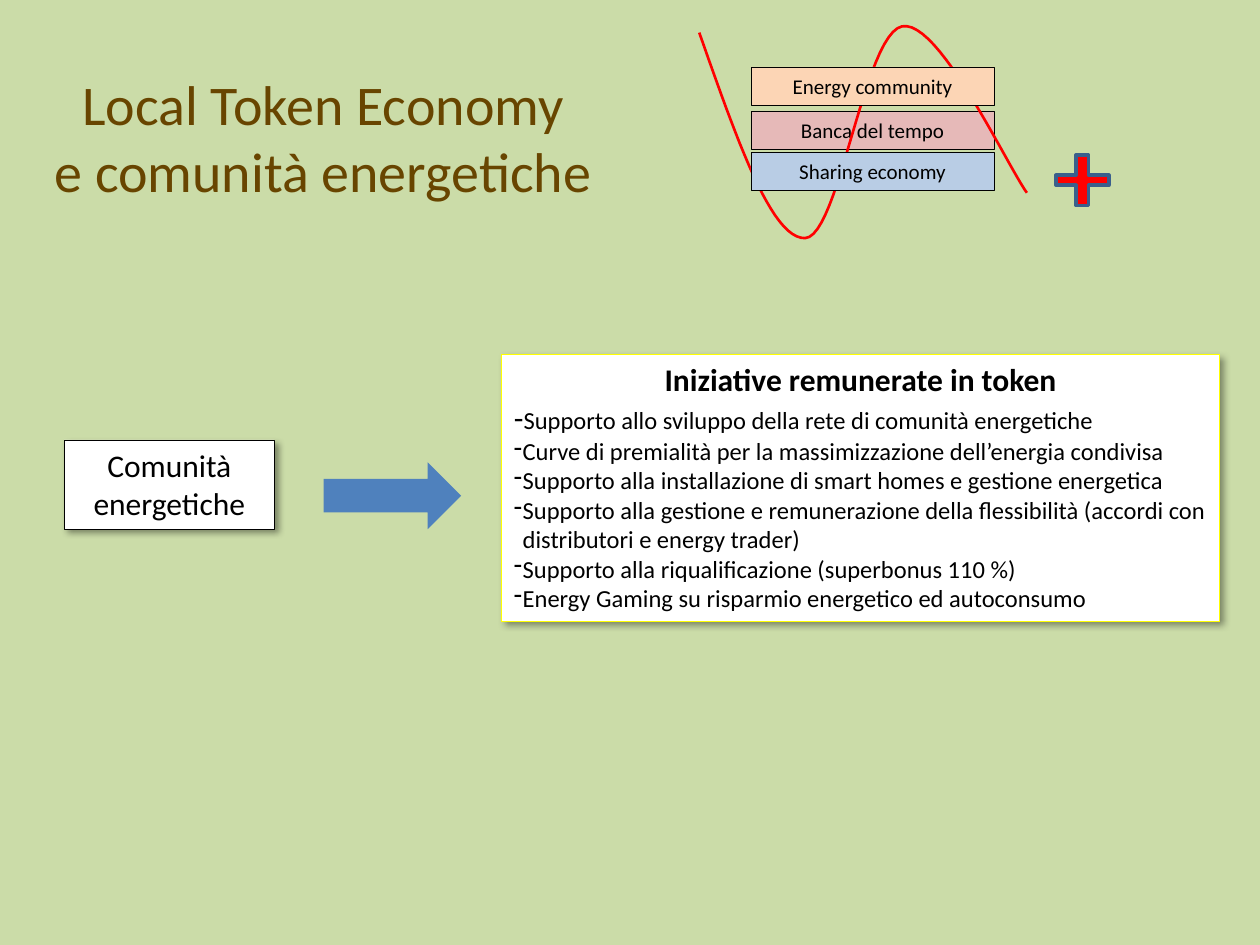
from dataclasses import dataclass

from lxml.etree import SubElement
from pptx import Presentation
from pptx.dml.color import RGBColor
from pptx.enum.shapes import MSO_SHAPE
from pptx.enum.text import MSO_ANCHOR, PP_ALIGN
from pptx.oxml import parse_xml
from pptx.oxml.ns import nsdecls, qn
from pptx.util import Pt

FONT = "Calibri"
INITIATIVES = [
    "Curve di premialità per la massimizzazione dell’energia condivisa",
    "Supporto alla installazione di smart homes e gestione energetica",
    "Supporto alla gestione e remunerazione della flessibilità "
    "(accordi con distributori e energy trader)",
    "Supporto alla riqualificazione (superbonus 110 %)",
    "Energy Gaming su risparmio energetico ed autoconsumo",
]
WAVE_START = (399.6, 18.7)
WAVE = [
    ((420.5, 77.8), (440.6, 136.8), (460.1, 136.1)),
    ((479.5, 135.4), (493.9, 19.4), (515.5, 15.1)),
    ((536.4, 10.8), (574.6, 92.9), (586.8, 110.2)),
]


@dataclass
class Label:
    text: str
    top: float
    fill: str


ENERGY = Label("Energy community", 38.2, "FCD5B5")
TIME_BANK = Label("Banca del tempo", 63.4, "E6B9B8")
SHARING = Label("Sharing economy", 87.1, "B9CDE5")


def rgb(value: str) -> RGBColor:
    """Turn a hex string into a colour."""
    return RGBColor.from_string(value)


def shadow_xml():
    """Return an effect list with a soft shadow to the lower right."""
    return parse_xml(
        f'<a:effectLst {nsdecls("a")}><a:outerShdw blurRad="{Pt(4)}" dist="{Pt(3)}" '
        'dir="2700000" algn="tl" rotWithShape="0"><a:srgbClr val="000000">'
        '<a:alpha val="40000"/></a:srgbClr></a:outerShdw></a:effectLst>')


def add_text(p, text: str, size: float, color: str = "000000",
             bold: bool = False, align=None, shadow: bool = False) -> None:
    """Add a formatted run to a paragraph."""
    if align is not None:
        p.alignment = align
    r = p.add_run()
    r.text = text
    r.font.size, r.font.bold, r.font.name = Pt(size), bold, FONT
    r.font.color.rgb = rgb(color)
    if shadow:
        r.font.fill._xPr.find(qn("a:solidFill")).addnext(shadow_xml())


def add_box(s, kind, left: float, top: float, width: float, height: float,
            fill: str, line: str = "", weight: float = 0.25, shadow: bool = False):
    """Add a filled preset shape with an optional outline and shadow."""
    sp = s.shapes.add_shape(kind, Pt(left), Pt(top), Pt(width), Pt(height))
    sp.shadow.inherit = False
    sp.fill.solid()
    sp.fill.fore_color.rgb = rgb(fill)
    if line:
        sp.line.color.rgb = rgb(line)
        sp.line.width = Pt(weight)
    else:
        sp.line.fill.background()
    if shadow:
        effects = sp._element.spPr.find(qn("a:effectLst"))
        effects.getparent().replace(effects, shadow_xml())
    sp.text_frame.word_wrap = True
    sp.text_frame.vertical_anchor = MSO_ANCHOR.TOP
    return sp


def add_label(s, label: Label) -> None:
    """Add one of the stacked community labels."""
    sp = add_box(s, MSO_SHAPE.RECTANGLE, 429.1, label.top, 139, 21.8, label.fill, "000000")
    add_text(sp.text_frame.paragraphs[0], label.text, 12, align=PP_ALIGN.CENTER)


def add_wave(s, steps: int = 24) -> None:
    """Add the red wave as an open outline sampled along its Bézier curves."""
    points, start = [], WAVE_START
    for c1, c2, end in WAVE:
        for i in range(1, steps + 1):
            t = i / steps
            u = 1 - t
            weights = (u ** 3, 3 * u * u * t, 3 * u * t * t, t ** 3)
            points.append(tuple(
                Pt(sum(w * q[axis] for w, q in zip(weights, (start, c1, c2, end))))
                for axis in (0, 1)))
        start = end
    builder = s.shapes.build_freeform(Pt(WAVE_START[0]), Pt(WAVE_START[1]))
    builder.add_line_segments(points, close=False)
    sp = builder.convert_to_shape()
    sp.shadow.inherit = False
    sp.fill.background()
    sp.line.color.rgb = rgb("FF0000")
    sp.line.width = Pt(1.5)


def add_title(s) -> None:
    """Add the two-line title."""
    tf = s.shapes.add_textbox(Pt(24.5), Pt(36.7), Pt(320.4), Pt(82.8)).text_frame
    tf.word_wrap = True
    tf.vertical_anchor = MSO_ANCHOR.MIDDLE
    tf.margin_left = tf.margin_right = Pt(5)
    tf.margin_top = tf.margin_bottom = Pt(3)
    for p, text in ((tf.paragraphs[0], "Local Token Economy"),
                    (tf.add_paragraph(), "e comunità energetiche")):
        add_text(p, text, 32, "684500", align=PP_ALIGN.CENTER, shadow=True)


def add_initiatives(s) -> None:
    """Add the box that lists the rewarded initiatives."""
    tf = add_box(s, MSO_SHAPE.RECTANGLE, 286.6, 202.3, 410.4, 152.6,
                 "FFFFFF", "FFFF00", shadow=True).text_frame
    add_text(tf.paragraphs[0], "Iniziative remunerate in token", 18,
             bold=True, align=PP_ALIGN.CENTER)
    p = tf.add_paragraph()
    add_text(p, "-", 18, align=PP_ALIGN.LEFT)
    add_text(p, "Supporto allo sviluppo della rete di comunità energetiche", 14)
    for text in INITIATIVES:
        p = tf.add_paragraph()
        add_text(p, text, 14, align=PP_ALIGN.LEFT)
        pPr = p._p.get_or_add_pPr()
        pPr.set("marL", str(Pt(5)))
        pPr.set("indent", str(-Pt(5)))
        SubElement(pPr, qn("a:buChar"), char="-")


def main() -> None:
    """Build and save the slide."""
    prs = Presentation()
    prs.slide_width, prs.slide_height = Pt(720), Pt(540)
    s = prs.slides.add_slide(prs.slide_layouts[6])
    s.background.fill.solid()
    s.background.fill.fore_color.rgb = rgb("CBDCA8")

    add_title(s)
    sp = add_box(s, MSO_SHAPE.RECTANGLE, 36.7, 251.3, 120.2, 51,
                 "FFFFFF", "000000", shadow=True)
    add_text(sp.text_frame.paragraphs[0], "Comunità energetiche", 18, align=PP_ALIGN.CENTER)
    add_initiatives(s)
    add_box(s, MSO_SHAPE.RIGHT_ARROW, 185, 264.2, 78.5, 38.2, "4F81BD")

    add_label(s, TIME_BANK)
    add_wave(s)
    add_label(s, SHARING)
    add_label(s, ENERGY)
    sp = add_box(s, MSO_SHAPE.CROSS, 603.4, 88.6, 30.2, 28.8, "FF0000", "3A5F8C", 2)
    sp.adjustments[0] = 0.4
    prs.save("out.pptx")


if __name__ == "__main__":
    main()
